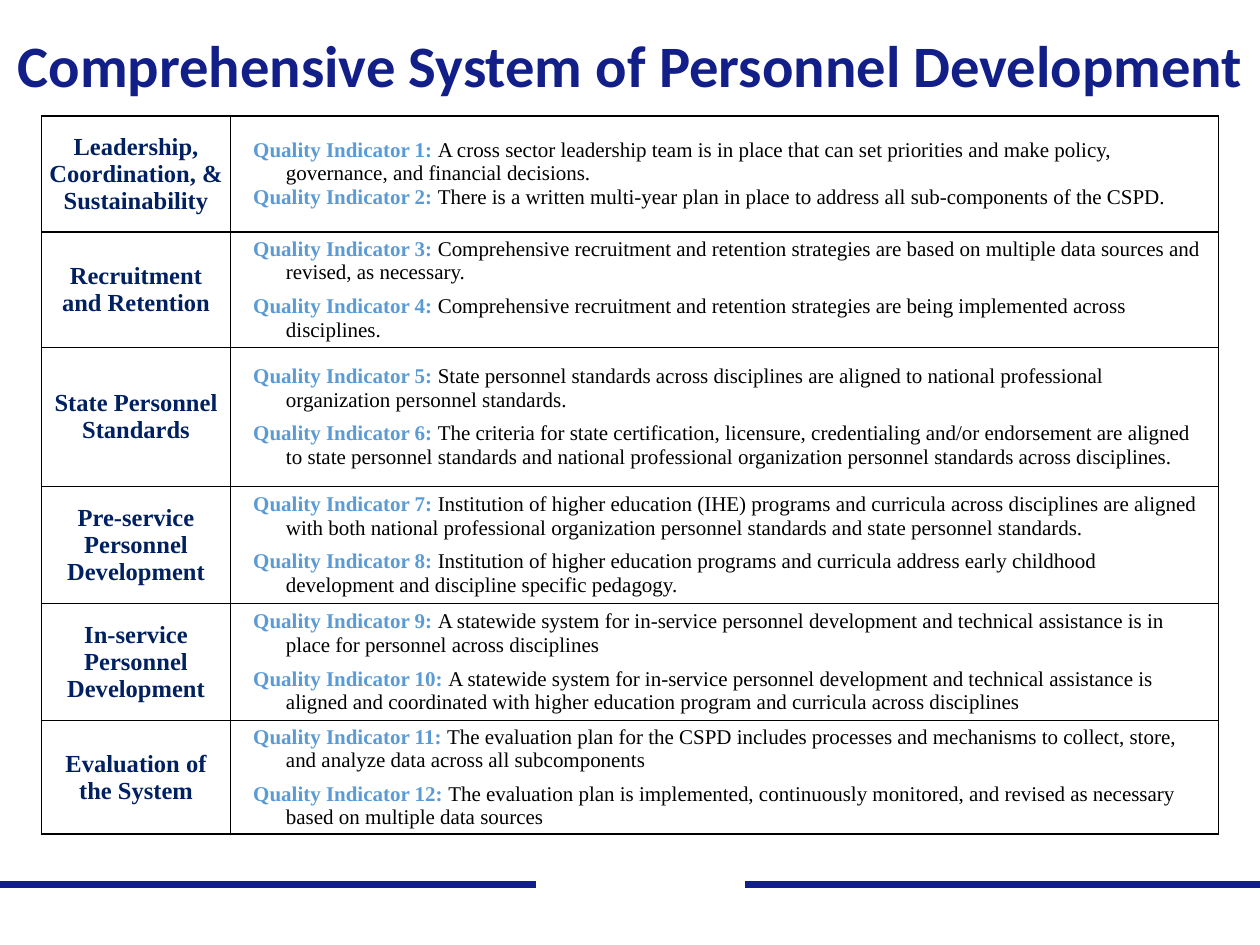
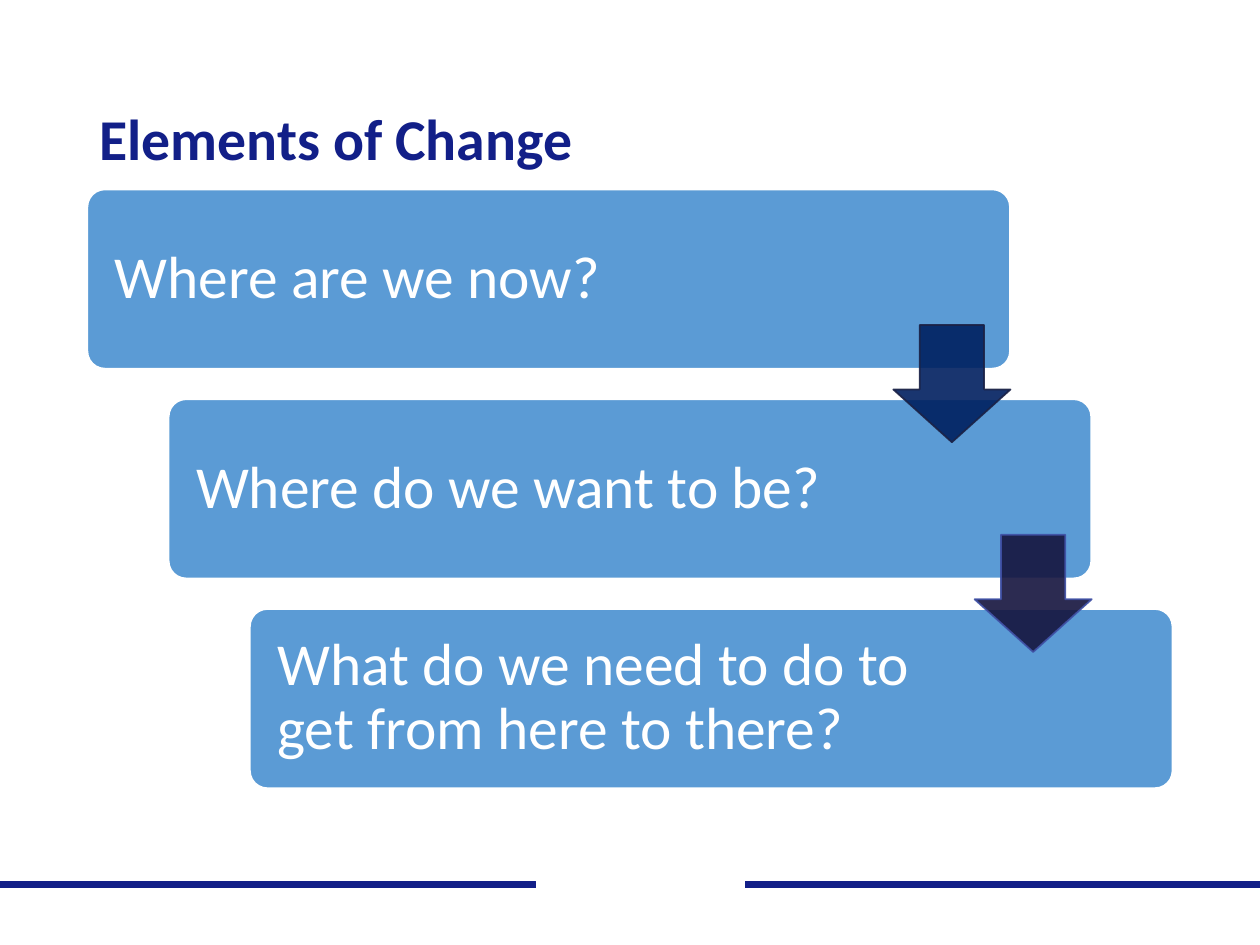
import pptx
import pptx.util
import pptx.dml.color
import pptx.enum.shapes
import pptx.enum.text
import pptx.oxml.ns
import lxml.etree

Inches = pptx.util.Inches
Pt = pptx.util.Pt
qn = pptx.oxml.ns.qn
MSO_SHAPE = pptx.enum.shapes.MSO_SHAPE
PP_ALIGN = pptx.enum.text.PP_ALIGN
MIDDLE = pptx.enum.text.MSO_ANCHOR.MIDDLE

NAVY = "121F88"
BLUE = "5B9BD5"
DARK_BLUE = "002060"
WHITE = "FFFFFF"
BLACK = "000000"
SANS = "Calibri"
SERIF = "Times New Roman"

COMPONENTS = [
    ("Leadership, Coordination, & Sustainability", 0.92, [
        "A cross sector leadership team is in place that can set priorities and make policy, "
        "governance, and financial decisions.",
        "There is a written multi-year plan in place to address all sub-components of the CSPD."]),
    ("Recruitment and Retention", 0.92, [
        "Comprehensive recruitment and retention strategies are based on multiple data sources "
        "and revised, as necessary.",
        "Comprehensive recruitment and retention strategies are being implemented across "
        "disciplines."]),
    ("State Personnel Standards", 1.1, [
        "State personnel standards across disciplines are aligned to national professional "
        "organization personnel standards.",
        "The criteria for state certification, licensure, credentialing and/or endorsement are "
        "aligned to state personnel standards and national professional organization personnel "
        "standards across disciplines."]),
    ("Pre-service Personnel Development", 0.93, [
        "Institution of higher education (IHE) programs and curricula across disciplines are "
        "aligned with both national professional organization personnel standards and state "
        "personnel standards.",
        "Institution of higher education programs and curricula address early childhood "
        "development and discipline specific pedagogy."]),
    ("In-service Personnel Development", 0.93, [
        "A statewide system for in-service personnel development and technical assistance is in "
        "place for personnel across disciplines",
        "A statewide system for in-service personnel development and technical assistance is "
        "aligned and coordinated with higher education program and curricula across disciplines"]),
    ("Evaluation of the System", 0.9, [
        "The evaluation plan for the CSPD includes processes and mechanisms to collect, store, "
        "and analyze data across all subcomponents",
        "The evaluation plan is implemented, continuously monitored, and revised as necessary "
        "based on multiple data sources"]),
]

QUESTIONS = [
    "Where are we now?",
    "Where do we want to be?",
    "What do we need to do to get from here to there?",
]


def rgb(color):
    return pptx.dml.color.RGBColor.from_string(color)


def format_run(r, size, font, color, bold=False):
    r.font.size = Pt(size)
    r.font.name = font
    r.font.color.rgb = rgb(color)
    r.font.bold = bold


def set_margins(box, left, top, right, bottom):
    box.margin_left, box.margin_top = Inches(left), Inches(top)
    box.margin_right, box.margin_bottom = Inches(right), Inches(bottom)


def add_line(s, x1, x2, y, color):
    line = s.shapes.add_connector(pptx.enum.shapes.MSO_CONNECTOR.STRAIGHT,
                                  Inches(x1), Inches(y), Inches(x2), Inches(y))
    line.line.color.rgb = rgb(color)
    line.line.width = Pt(4.5)
    lxml.etree.SubElement(line._element.spPr, qn("a:effectLst"))


def add_slide(prs, title, left, top, width, height, size, align):
    s = prs.slides.add_slide(prs.slide_layouts[6])
    add_line(s, 0, 10, 7.02, NAVY)
    add_line(s, 4.25, 5.91, 7.02, WHITE)
    sp = s.shapes.add_textbox(Inches(left), Inches(top), Inches(width), Inches(height))
    tf = sp.text_frame
    tf.word_wrap = True
    tf.vertical_anchor = MIDDLE
    p = tf.paragraphs[0]
    p.text = title
    p.alignment = align
    p.line_spacing = 0.9
    format_run(p.runs[0], size, SANS, NAVY, True)
    return s


def style_cell(cell, side_margin):
    cell.vertical_anchor = MIDDLE
    set_margins(cell, side_margin, 0, side_margin, 0)
    tc_pr = cell._tc.get_or_add_tcPr()
    for side in ("lnL", "lnR", "lnT", "lnB"):
        ln = lxml.etree.SubElement(tc_pr, qn("a:" + side), w=str(Pt(1)))
        fill = lxml.etree.SubElement(ln, qn("a:solidFill"))
        lxml.etree.SubElement(fill, qn("a:srgbClr"), val=BLACK)
    cell.fill.background()


def fill_label(cell, label):
    style_cell(cell, 0.06)
    p = cell.text_frame.paragraphs[0]
    p.text = label
    p.alignment = PP_ALIGN.CENTER
    format_run(p.runs[0], 14, SERIF, DARK_BLUE, True)


def fill_indicators(cell, indicators, first_number, space):
    style_cell(cell, 0.07)
    tf = cell.text_frame
    for i, indicator in enumerate(indicators):
        p = tf.add_paragraph() if i else tf.paragraphs[0]
        p_pr = p._p.get_or_add_pPr()
        p_pr.set("marL", str(Inches(0.37)))
        p_pr.set("indent", str(Inches(-0.26)))
        p.space_before = Pt(space if i else 0)
        p.space_after = Pt(space)
        r = p.add_run()
        r.text = f"Quality Indicator {first_number + i}: "
        format_run(r, 12, SERIF, BLUE, True)
        r = p.add_run()
        r.text = indicator
        format_run(r, 12, SERIF, BLACK)


def add_component_table(s):
    height = sum(row_height for _, row_height, _ in COMPONENTS)
    table = s.shapes.add_table(len(COMPONENTS), 2, Inches(0.33), Inches(0.92),
                               Inches(9.34), Inches(height)).table
    table.first_row = table.horz_banding = False
    table.columns[0].width = Inches(1.5)
    table.columns[1].width = Inches(7.84)
    number = 1
    for i, (label, row_height, indicators) in enumerate(COMPONENTS):
        table.rows[i].height = Inches(row_height)
        fill_label(table.cell(i, 0), label)
        fill_indicators(table.cell(i, 1), indicators, number, 3 if i else 0)
        number += len(indicators)


def add_shape(s, kind, left, top, width, height, fill, line, line_width, adjustments):
    sp = s.shapes.add_shape(kind, Inches(left), Inches(top), Inches(width), Inches(height))
    sp.shadow.inherit = False
    for i, value in enumerate(adjustments):
        sp.adjustments[i] = value
    sp.fill.solid()
    sp.fill.fore_color.rgb = rgb(fill)
    sp.line.color.rgb = rgb(line)
    sp.line.width = Pt(line_width)
    return sp


def add_step(s, left, top, question):
    sp = add_shape(s, MSO_SHAPE.ROUNDED_RECTANGLE, left, top, 7.33, 1.43, BLUE, WHITE, 1.5, [0.1])
    tf = sp.text_frame
    tf.word_wrap = True
    tf.vertical_anchor = MIDDLE
    set_margins(tf, 0.18, 0.18, 1.76, 0.18)
    p = tf.paragraphs[0]
    p.text = question
    p.alignment = PP_ALIGN.LEFT
    p.line_spacing = 0.9
    format_run(p.runs[0], 34, SANS, WHITE)


def add_step_arrow(s, left, top, fill, line):
    sp = add_shape(s, MSO_SHAPE.DOWN_ARROW, left, top, 0.93, 0.93, fill, line, 1, [0.55, 0.45])
    for color in sp._element.spPr.iter(qn("a:srgbClr")):
        lxml.etree.SubElement(color, qn("a:alpha"), val="90000")


def add_staircase(s):
    shift, pitch = 1.29 / 2, 3.33 / 2
    for i, question in enumerate(QUESTIONS):
        add_step(s, 0.69 + i * shift, 1.5 + i * pitch, question)
    for i, (fill, line) in enumerate([(DARK_BLUE, "1B2246"), ("16153F", "4051A6")]):
        add_step_arrow(s, 7.09 + i * shift, 2.58 + i * pitch, fill, line)


def main():
    prs = pptx.Presentation()
    prs.slide_width = Inches(10)
    prs.slide_height = Inches(7.5)
    s = add_slide(prs, "Comprehensive System of Personnel Development",
                  0, -0.08, 10, 1.25, 33.5, PP_ALIGN.CENTER)
    add_component_table(s)
    s = add_slide(prs, "Elements of Change", 0.69, 0.4, 8.62, 1.45, 33, PP_ALIGN.LEFT)
    add_staircase(s)
    prs.save("out.pptx")


if __name__ == "__main__":
    main()
